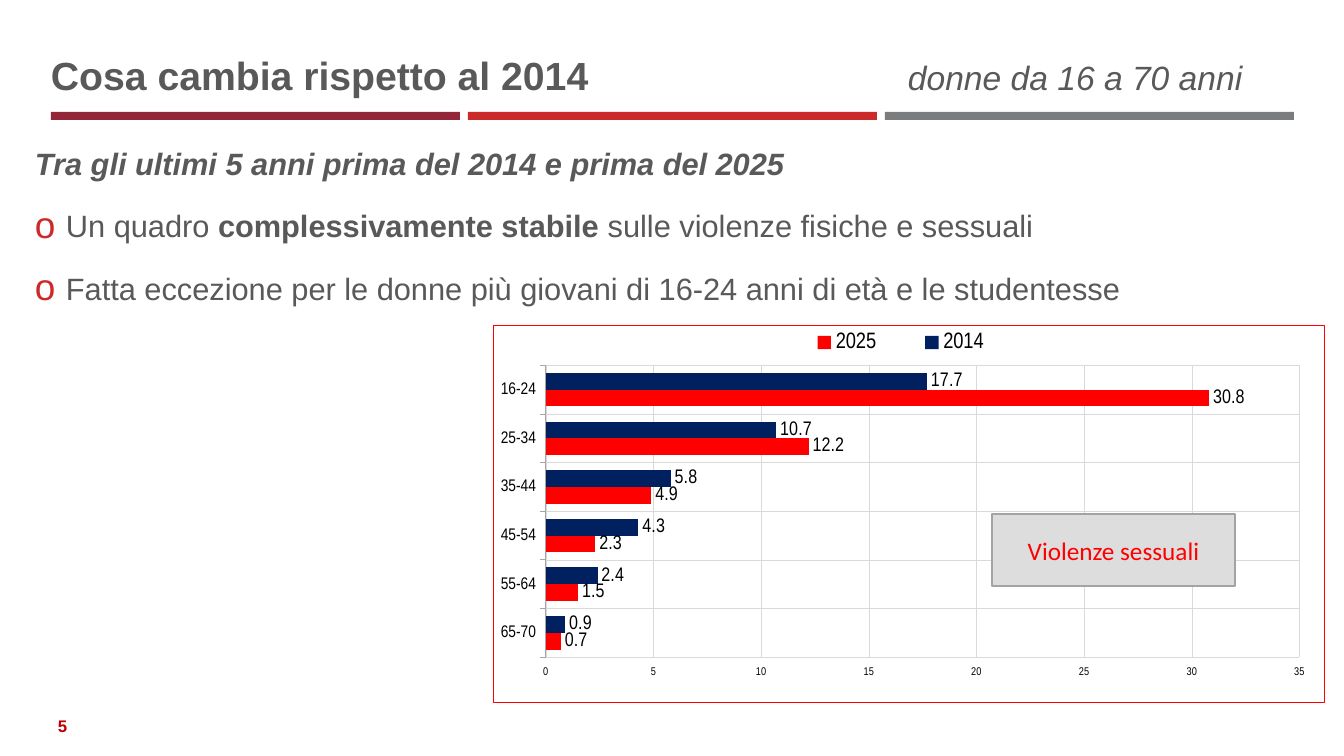
"""Builds the slide comparing sexual violence by age group in 2014 and 2025."""
from lxml import etree
from pptx import Presentation
from pptx import util as u
from pptx.chart import data as chart_data
from pptx.dml import color
from pptx.enum import chart as ch
from pptx.enum import shapes, text
from pptx.oxml import parse_xml
from pptx.oxml.ns import nsdecls, qn

PX = 914400 / 100.8
COLORS = {
    "wine": "942639", "red": "CC2A2A", "gray": "7B7C7E", "ink": "595959",
    "number": "C00000", "bright": "FF0000", "navy": "002060", "black": "000000",
    "axis": "A6A6A6", "grid": "D9D9D9", "label_fill": "DDDDDD", "label_line": "A3A3A3",
}


def px(*lengths):
    return [u.Emu(round(length * PX)) for length in lengths]


def style(font, size, name, tint, bold=False, italic=False):
    font.size, font.name, font.bold, font.italic = u.Pt(size), name, bold, italic
    font.color.rgb = color.RGBColor.from_string(COLORS[tint])


deck = Presentation()
deck.slide_width, deck.slide_height = px(1344, 756)
page = deck.slides.add_slide(deck.slide_layouts[6])

for index, tint in enumerate(("wine", "red", "gray")):
    stripe = page.shapes.add_shape(shapes.MSO_SHAPE.RECTANGLE, *px(51 + 417 * index, 112, 409, 8))
    stripe.shadow.inherit = False
    stripe.fill.solid()
    stripe.fill.fore_color.rgb = color.RGBColor.from_string(COLORS[tint])
    stripe.line.fill.background()

frames = {}
for name, place, anchor in (
    ("body", (35, 145, 1242, 494), text.MSO_ANCHOR.TOP),
    ("title", (51, 55, 1242, 43), text.MSO_ANCHOR.BOTTOM),
    ("number", (35, 706, 55, 40), text.MSO_ANCHOR.MIDDLE),
):
    frame = page.shapes.add_textbox(*px(*place)).text_frame
    frame.word_wrap = True
    frame.vertical_anchor = anchor
    frame.margin_left = frame.margin_right = frame.margin_top = frame.margin_bottom = 0
    frames[name] = frame

body_lines = [
    [("Tra gli ultimi 5 anni prima del 2014 e prima del 2025", True)],
    [("Un quadro ", False), ("complessivamente stabile ", True),
     ("sulle violenze fisiche e sessuali", False)],
    [("Fatta eccezione per le donne più giovani di 16-24 anni di età e le studentesse", False)],
]
for index, line in enumerate(body_lines):
    para = frames["body"].paragraphs[0] if index == 0 else frames["body"].add_paragraph()
    if index:
        props = para._p.get_or_add_pPr()
        indent = px(31)[0]
        props.set("marL", str(indent))
        props.set("indent", str(-indent))
        bullet_color = etree.SubElement(props, qn("a:buClr"))
        etree.SubElement(bullet_color, qn("a:srgbClr"), val=COLORS["red"])
        etree.SubElement(props, qn("a:buSzPct"), val="120000")
        etree.SubElement(props, qn("a:buFont"), typeface="Arial")
        etree.SubElement(props, qn("a:buChar"), char="o")
    para.space_after = u.Pt(18)
    for words, bold in line:
        span = para.add_run()
        span.text = words
        style(span.font, 22, "Arial", "ink", bold, index == 0)

para = frames["title"].paragraphs[0]
tabs = etree.SubElement(para._p.get_or_add_pPr(), qn("a:tabLst"))
etree.SubElement(tabs, qn("a:tab"), pos=str(px(857)[0]), algn="l")
para.line_spacing = u.Pt(30)
for words, size, bold in (("Cosa cambia rispetto al 2014\t", 28, True),
                          ("donne da 16 a 70 anni", 24, False)):
    span = para.add_run()
    span.text = words
    style(span.font, size, "Arial", "ink", bold, not bold)

para = frames["number"].paragraphs[0]
para.text = "5"
para.alignment = text.PP_ALIGN.CENTER
style(para.runs[0].font, 12, "Arial", "number", True)

figures = chart_data.CategoryChartData(number_format="0.0")
figures.categories = ["16-24", "25-34", "35-44", "45-54", "55-64", "65-70"]
figures.add_series("2014", (17.7, 10.7, 5.8, 4.3, 2.4, 0.9))
figures.add_series("2025", (30.8, 12.2, 4.9, 2.3, 1.5, 0.7))
chart = page.shapes.add_chart(
    ch.XL_CHART_TYPE.BAR_CLUSTERED, *px(493, 325, 832, 378), figures).chart
style(chart.font, 8, "Arial Narrow", "black")
chart.has_title = False
chart.has_legend = True
chart.legend.position = ch.XL_LEGEND_POSITION.TOP
chart.legend.include_in_layout = False
style(chart.legend.font, 16, "Arial Narrow", "black")

plot = chart.plots[0]
plot.gap_width, plot.overlap, plot.vary_by_categories = 90, 0, False
for series, tint in zip(plot.series, ("navy", "bright")):
    series.format.fill.solid()
    series.format.fill.fore_color.rgb = color.RGBColor.from_string(COLORS[tint])
    labels = series.data_labels
    labels.show_value = True
    labels.position = ch.XL_LABEL_POSITION.OUTSIDE_END
    style(labels.font, 14, "Arial Narrow", "black")

ages, rates = chart.category_axis, chart.value_axis
for axis, size in ((ages, 12), (rates, 8)):
    style(axis.tick_labels.font, size, "Arial Narrow", "black")
    axis.has_major_gridlines = True
    grid = axis.major_gridlines.format.line
    grid.width = u.Pt(0.25)
    grid.color.rgb = color.RGBColor.from_string(COLORS["grid"])
ages.reverse_order = True
ages.major_tick_mark = ch.XL_TICK_MARK.OUTSIDE
ages.format.line.width = u.Pt(0.75)
ages.format.line.color.rgb = color.RGBColor.from_string(COLORS["axis"])
rates.minimum_scale, rates.maximum_scale, rates.major_unit = 0, 35, 5
rates.major_tick_mark = ch.XL_TICK_MARK.NONE
rates.tick_label_position = ch.XL_TICK_LABEL_POSITION.HIGH
rates.format.line.fill.background()
rates.tick_labels.number_format = "0"
rates.tick_labels.number_format_is_linked = False

area = chart._chartSpace.chart.plotArea
legend = chart._chartSpace.chart.find(qn("c:legend"))
for part, slot, target, (left, top, width, height) in (
    (area, 0, '<c:layoutTarget val="inner"/>', (0.063, 0.106, 0.907, 0.774)),
    (legend, 1, "", (0.34, 0, 0.3, 0.09)),
):
    for old_layout in part.findall(qn("c:layout")):
        part.remove(old_layout)
    part.insert(slot, parse_xml(
        f'<c:layout {nsdecls("c")}><c:manualLayout>{target}'
        f'<c:xMode val="edge"/><c:yMode val="edge"/><c:x val="{left}"/><c:y val="{top}"/>'
        f'<c:w val="{width}"/><c:h val="{height}"/></c:manualLayout></c:layout>'))
chart._chartSpace.chart.addnext(parse_xml(
    f'<c:spPr {nsdecls("c", "a")}><a:noFill/><a:ln w="9525"><a:solidFill>'
    f'<a:srgbClr val="{COLORS["bright"]}"/></a:solidFill></a:ln></c:spPr>'))

label = page.shapes.add_shape(shapes.MSO_SHAPE.RECTANGLE, *px(992, 514, 243, 72))
label.shadow.inherit = False
label.fill.solid()
label.fill.fore_color.rgb = color.RGBColor.from_string(COLORS["label_fill"])
label.line.width = u.Pt(1.75)
label.line.color.rgb = color.RGBColor.from_string(COLORS["label_line"])
label.text_frame.text = "Violenze sessuali"
label.text_frame.vertical_anchor = text.MSO_ANCHOR.MIDDLE
para = label.text_frame.paragraphs[0]
para.alignment = text.PP_ALIGN.CENTER
style(para.runs[0].font, 18, "Calibri", "bright")

deck.save("out.pptx")
